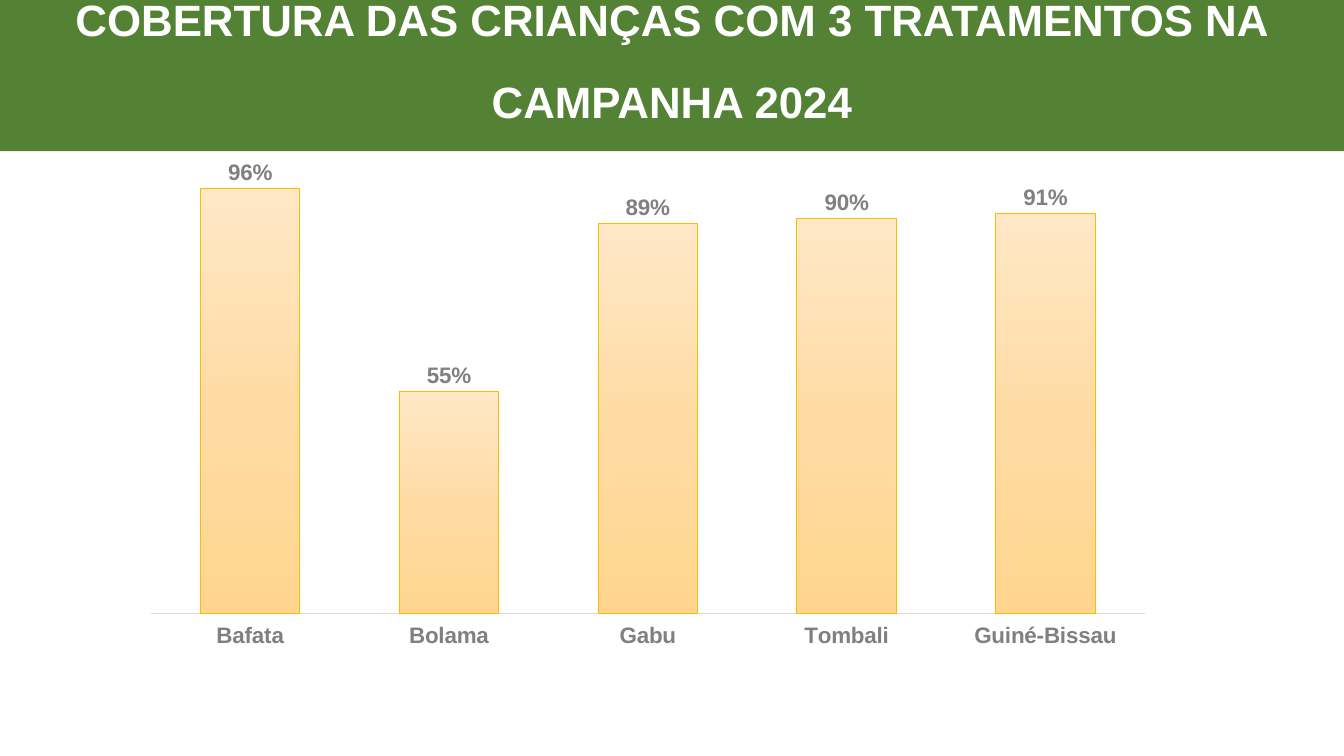
from lxml import etree
from pptx import Presentation
from pptx.chart.data import CategoryChartData
from pptx.dml.color import RGBColor
from pptx.enum.chart import XL_CHART_TYPE, XL_LABEL_POSITION, XL_TICK_LABEL_POSITION, XL_TICK_MARK
from pptx.enum.shapes import MSO_SHAPE
from pptx.enum.text import MSO_ANCHOR, PP_ALIGN
from pptx.oxml import parse_xml
from pptx.oxml.ns import nsdecls, qn
from pptx.util import Inches, Pt

RECTANGLE = MSO_SHAPE.RECTANGLE
COLUMNS = XL_CHART_TYPE.COLUMN_CLUSTERED
OUTSIDE_END = XL_LABEL_POSITION.OUTSIDE_END
LOW = XL_TICK_LABEL_POSITION.LOW
NO_TICK = XL_TICK_MARK.NONE
MIDDLE = MSO_ANCHOR.MIDDLE
CENTER = PP_ALIGN.CENTER


def color(value):
    return RGBColor.from_string(value)


def format_font(font, size, value):
    for name, setting in {"name": "Arial", "size": Pt(size), "bold": True}.items():
        setattr(font, name, setting)
    font.color.rgb = color(value)


presentation = Presentation()
presentation.slide_width = Inches(13.33)
presentation.slide_height = Inches(7.5)
slide = presentation.slides.add_slide(presentation.slide_layouts[6])

banner = slide.shapes.add_shape(RECTANGLE, 0, 0, Inches(13.33), Inches(1.5))
banner.shadow.inherit = False
banner.fill.solid()
banner.fill.fore_color.rgb = color("548235")
banner.line.fill.background()
banner.text_frame.word_wrap = True
banner.text_frame.vertical_anchor = MIDDLE
paragraph = banner.text_frame.paragraphs[0]
paragraph.alignment = CENTER
paragraph.line_spacing = 0.9
title = paragraph.add_run()
title.text = "COBERTURA DAS CRIANÇAS COM 3 TRATAMENTOS NA CAMPANHA 2024"
format_font(title.font, 54, "FFFFFF")
title._r.get_or_add_rPr().set("baseline", "30000")

coverage = CategoryChartData(number_format="0%")
coverage.categories = ["Bafata", "Bolama", "Gabu", "Tombali", "Guiné-Bissau"]
coverage.add_series("Series 1", [0.96, 0.55, 0.89, 0.9, 0.91])
chart = slide.shapes.add_chart(
    COLUMNS, Inches(1.29), Inches(1.53), Inches(10.27), Inches(4.95), coverage
).chart
chart.has_legend = False
chart.has_title = False
format_font(chart.font, 16, "000000")

category_axis = chart.category_axis
category_axis.major_tick_mark = NO_TICK
category_axis.tick_label_position = LOW
category_axis.format.line.color.rgb = color("D9D9D9")
category_axis.format.line.width = Pt(0.75)
format_font(category_axis.tick_labels.font, 16, "808080")

value_axis = chart.value_axis
value_axis_format = {
    "minimum_scale": 0.1,
    "maximum_scale": 1,
    "has_major_gridlines": False,
    "visible": False,
}
for name, setting in value_axis_format.items():
    setattr(value_axis, name, setting)

plot = chart.plots[0]
plot.gap_width = 100
plot.overlap = -24
plot.vary_by_categories = False

series = plot.series[0]
series.format.fill.gradient()
series.format.fill.gradient_angle = 270
stops = series._element.find(".//" + qn("a:gsLst"))
for stop in list(stops):
    stops.remove(stop)
for position, value in [(0, "FFE8C7"), (50, "FFDBA4"), (100, "FFD58F")]:
    stop = etree.SubElement(stops, qn("a:gs"), pos=str(position * 1000))
    etree.SubElement(stop, qn("a:srgbClr"), val=value)
series.format.line.color.rgb = color("F9BC00")
series.format.line.width = Pt(0.75)

labels = series.data_labels
labels_format = {
    "show_value": True,
    "position": OUTSIDE_END,
    "number_format": "0%",
    "number_format_is_linked": False,
}
for name, setting in labels_format.items():
    setattr(labels, name, setting)
format_font(labels.font, 16, "808080")

plot_area = chart._chartSpace.chart.plotArea
for layout in plot_area.findall(qn("c:layout")):
    plot_area.remove(layout)
layout = parse_xml(f"<c:layout {nsdecls('c')}><c:manualLayout/></c:layout>")
plot_area.insert(0, layout)
layout_values = {
    "layoutTarget": "inner",
    "xMode": "edge",
    "yMode": "edge",
    "x": 0.02,
    "y": 0.03,
    "w": 0.96,
    "h": 0.89,
}
for name, setting in layout_values.items():
    etree.SubElement(layout[0], qn("c:" + name), val=str(setting))

presentation.save("out.pptx")
